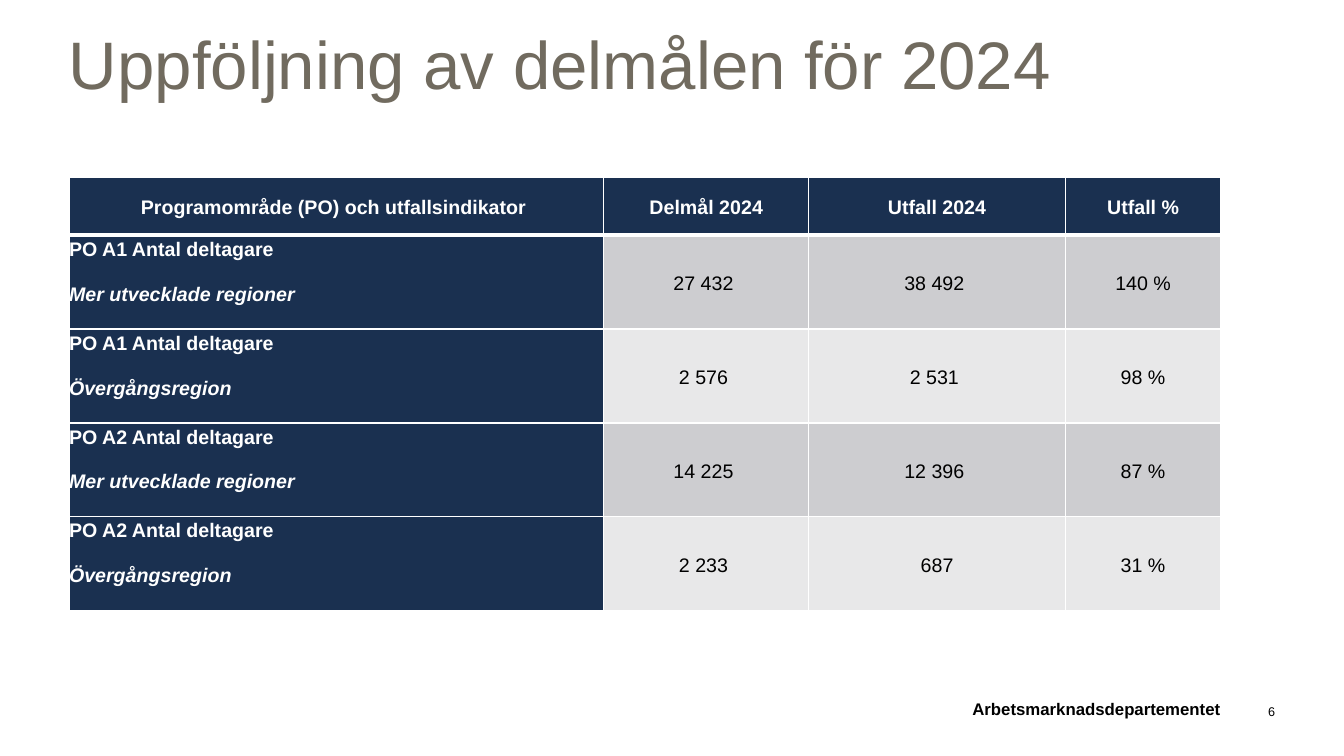
import pptx
import pptx.util
import pptx.dml.color
import pptx.enum.text
from lxml import etree

Pt = pptx.util.Pt
RGB = pptx.dml.color.RGBColor
ALIGN = pptx.enum.text.PP_ALIGN
ANCHOR = pptx.enum.text.MSO_ANCHOR

NAVY = RGB(0x1A, 0x30, 0x50)
TAUPE = RGB(0x71, 0x6B, 0x5F)
WHITE = RGB(0xFF, 0xFF, 0xFF)
BLACK = RGB(0, 0, 0)
BANDS = [RGB(0xCD, 0xCD, 0xD0), RGB(0xE8, 0xE8, 0xE9)]
NS = "http://schemas.openxmlformats.org/drawingml/2006/main"


def style(para, size, color, bold=False, italic=False):
    for run in para.runs:
        font = run.font
        font.name, font.size = "Arial", Pt(size)
        font.bold, font.italic = bold, italic
        font.color.rgb = color


def border(cell, side, width):
    line = etree.SubElement(cell._tc.get_or_add_tcPr(), f"{{{NS}}}ln{side}",
                            w=str(Pt(width)))
    fill = etree.SubElement(line, f"{{{NS}}}solidFill")
    etree.SubElement(fill, f"{{{NS}}}srgbClr", val=str(WHITE))


deck = pptx.Presentation()
deck.slide_width, deck.slide_height = Pt(960), Pt(540)
slide = deck.slides.add_slide(deck.slide_layouts[6])

# Title, department and page number
labels = [
    ("Uppföljning av delmålen för 2024", (49.3, 7.2, 861.8, 81.4), 8.6,
     48, TAUPE, False, ALIGN.LEFT, ANCHOR.TOP, 0),
    ("Arbetsmarknadsdepartementet", (236.9, 496.1, 635, 17.3), 0,
     12, BLACK, True, ALIGN.RIGHT, ANCHOR.BOTTOM, 6),
    ("6", (872.6, 496.1, 38.2, 17.3), 0,
     9, BLACK, False, ALIGN.RIGHT, ANCHOR.BOTTOM, 6),
]
for text, area, inset, size, color, bold, align, anchor, after in labels:
    frame = slide.shapes.add_textbox(*map(Pt, area)).text_frame
    frame.word_wrap = True
    frame.margin_left = frame.margin_right = 0
    frame.margin_top = frame.margin_bottom = Pt(inset)
    frame.vertical_anchor = anchor
    frame.text = text
    para = frame.paragraphs[0]
    para.alignment = align
    para.space_after = Pt(after)
    style(para, size, color, bold)

# Table of targets and outcomes
rows = [
    ["Programområde (PO) och utfallsindikator ", "Delmål 2024", "Utfall 2024", "Utfall %"],
    ["PO A1 Antal deltagare\nMer utvecklade regioner", "27 432 ", "38 492 ", "140 %"],
    ["PO A1 Antal deltagare\nÖvergångsregion", "2 576 ", "2 531 ", "98 %"],
    ["PO A2 Antal deltagare\nMer utvecklade regioner", "14 225 ", "12 396 ", "87 %"],
    ["PO A2 Antal deltagare\nÖvergångsregion", "2 233 ", "687", "31 %"],
]
widths = [382, 146.4, 183.4, 111]
heights = [41] + [67.1] * 4
table = slide.shapes.add_table(len(rows), len(widths), Pt(49.3), Pt(126.9),
                               Pt(sum(widths)), Pt(sum(heights))).table
for col, width in zip(table.columns, widths):
    col.width = Pt(width)
for row, height in zip(table.rows, heights):
    row.height = Pt(height)

for r, texts in enumerate(rows):
    for c, text in enumerate(texts):
        cell = table.cell(r, c)
        head = r == 0
        name = c == 0 and not head
        dark = head or name
        cell.margin_left = cell.margin_right = 0
        cell.margin_top = cell.margin_bottom = 0
        cell.vertical_anchor = ANCHOR.TOP if name else ANCHOR.MIDDLE

        # White rules, thicker under the header
        for side in "LRTB":
            thick = (r, side) in [(0, "B"), (1, "T")]
            border(cell, side, 3 if thick else 1)
        cell.fill.solid()
        cell.fill.fore_color.rgb = NAVY if dark else BANDS[(r - 1) % 2]

        cell.text_frame.text = text
        for i, para in enumerate(cell.text_frame.paragraphs):
            para.alignment = ALIGN.LEFT if name else ALIGN.CENTER
            para.line_spacing = 1.15
            para.space_after = Pt(14)
            style(para, 14, WHITE if dark else BLACK, dark, i == 1)

deck.save("out.pptx")
